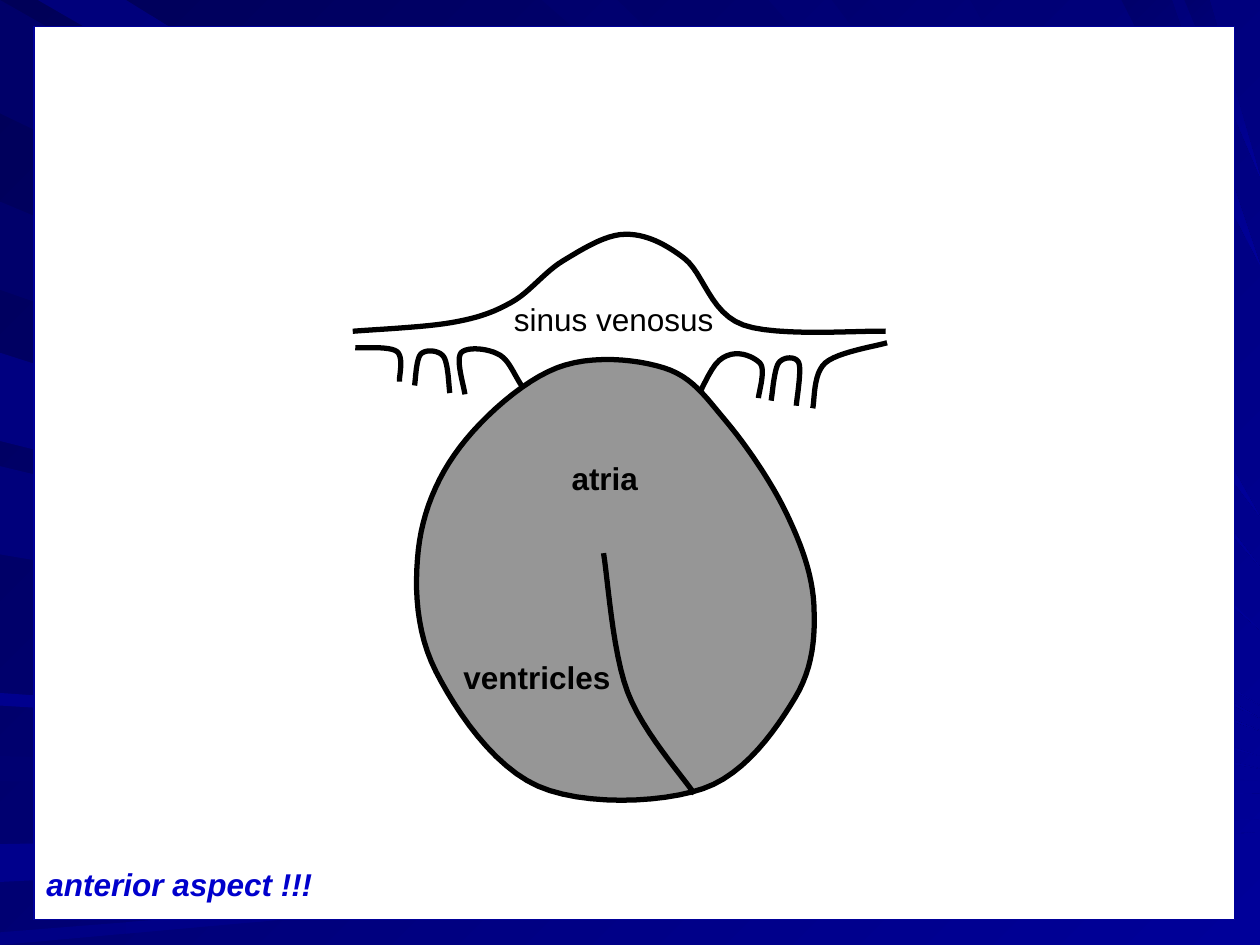
import pptx
import pptx.dml.color
import pptx.enum.shapes
import pptx.enum.text
import pptx.util
from pptx.util import Inches

LEFT_RAYS = [
    (0, 0.9, 5.7, "000069"), (1.6, 2.3, 5.8, "00006B"), (2.8, 3.5, 6, "000080"),
    (3.7, 4.4, 6.1, "00007B"), (5.5, 5.6, 6.2, "00008E"), (6, 6.2, 6.3, "000071"),
    (6.7, 7, 6.5, "00008C"), (7.4, 7.5, 6.6, "000085"),
]
TOP_RAYS = [
    (0.3, 1, 5.6, "00007B"), (4.3, 4.9, 5, "00006D"), (6.1, 6.6, 4.5, "000073"),
    (6.9, 7.7, 4.1, "000073"), (8.9, 9.3, 2.1, "00006B"), (9.4, 9.6, 1.4, "00006D"),
]
VESSELS = [
    [(2.8, 2.63), (3.59, 2.56), (4.06, 2.4), (4.47, 2.07), (4.96, 1.86), (5.43, 2.05),
     (5.9, 2.58), (7.03, 2.63)],
    [(2.82, 2.76), (3.15, 2.79), (3.17, 3.03)],
    [(3.29, 3.06), (3.34, 2.81), (3.52, 2.83), (3.57, 3.12)],
    [(3.69, 3.13), (3.66, 2.8), (3.97, 2.82), (4.19, 3.13), (4.57, 3.53), (5.29, 3.5),
     (5.71, 2.86), (6.03, 2.88), (6.02, 3.16)],
    [(6.12, 3.18), (6.18, 2.88), (6.34, 2.88), (6.32, 3.22)],
    [(6.45, 3.24), (6.55, 2.88), (7.04, 2.72)],
]
HEART = [
    (4.42, 2.92), (3.65, 3.55), (3.32, 4.37), (3.46, 5.33), (4.27, 6.24), (5.58, 6.26),
    (6.31, 5.54), (6.46, 4.8), (6.24, 4.07), (5.76, 3.34), (5.27, 2.92),
]
SEPTUM = [(5.51, 6.3), (4.98, 5.49), (4.79, 4.39)]
LABELS = [
    ("anterior aspect !!!", 0.27, 6.82, 2.99, "0000CC", True, True, "LEFT"),
    ("sinus venosus", 3.98, 2.33, 1.89, "000000", False, False, "LEFT"),
    ("ventricles", 3.58, 5.17, 1.42, "000000", True, False, "LEFT"),
    ("atria", 4.13, 3.59, 1.34, "000000", True, False, "CENTER"),
]


def color(value):
    """Return the colour for a hex string."""
    return pptx.dml.color.RGBColor.from_string(value)


def paint_gradient(fill, start, end, angle):
    """Fill with a gradient at a clockwise angle."""
    fill.gradient()
    fill.gradient_angle = (360 - angle) % 360
    for stop, value in zip(fill.gradient_stops, (start, end)):
        stop.color.rgb = color(value)


def style_shape(shape, fill, line, width):
    """Give a shape a plain fill and line and no shadow."""
    shape.shadow.inherit = False
    shape.line.color.rgb = color(line)
    shape.line.width = pptx.util.Pt(width)
    if fill:
        shape.fill.solid()
        shape.fill.fore_color.rgb = color(fill)
    else:
        shape.fill.background()


def add_outline(page, left, top, points, closed):
    """Build a freeform through points in inches from the box's corner."""
    places = [(left + Inches(x), top + Inches(y)) for x, y in points]
    builder = page.shapes.build_freeform(*places[0])
    builder.add_line_segments(places[1:], close=closed)
    return builder.convert_to_shape()


def trace_curve(knots, closed, steps=12):
    """Return points along a smooth curve through the knots."""
    if closed:
        chain = [knots[-1], *knots, *knots[:2]]
    else:
        chain = [knots[0], *knots, knots[-1]]
    points = [knots[0]]
    for before, start, end, after in zip(chain, chain[1:], chain[2:], chain[3:]):
        for step in range(1, steps + 1):
            t = step / steps
            points.append(tuple(
                a * (1 - t) ** 3
                + 3 * (a + (b - p) / 6) * t * (1 - t) ** 2
                + 3 * (b - (n - a) / 6) * t * t * (1 - t)
                + b * t ** 3
                for p, a, b, n in zip(before, start, end, after)
            ))
    return points


def add_curve(page, left, top, knots, fill=None):
    """Draw a thick black curve, closed and filled when a colour is given."""
    closed = fill is not None
    shape = add_outline(page, left, top, trace_curve(knots, closed), closed)
    style_shape(shape, fill, "000000", 3)


def add_backdrop(page, left, top, width):
    """Paint the blue background and the rays that meet its right edge."""
    paint_gradient(page.background.fill, "000058", "000099", 45)
    edge = width.inches
    rays = [([(0, a), (0, b), (edge, tip)], start, 0) for a, b, tip, start in LEFT_RAYS]
    rays += [([(a, 0), (b, 0), (edge, tip)], start, 45) for a, b, tip, start in TOP_RAYS]
    for points, start, angle in rays:
        ray = add_outline(page, left, top, points, True)
        ray.shadow.inherit = False
        paint_gradient(ray.fill, start, "000099", angle)
        ray.line.fill.background()


def add_panel(page, left, top, width, height):
    """Place the white panel behind the drawing."""
    panel = page.shapes.add_shape(pptx.enum.shapes.MSO_SHAPE.RECTANGLE, left, top, width, height)
    style_shape(panel, "FFFFFF", "000099", 0.75)


def add_heart(page, left, top):
    """Draw the vessels, the heart and its septum."""
    for vessel in VESSELS:
        add_curve(page, left, top, vessel)
    add_curve(page, left, top, HEART, "969696")
    add_curve(page, left, top, SEPTUM)


def add_labels(page, left, top):
    """Write the names of the parts and the aspect."""
    for text, x, y, width, value, bold, italic, align in LABELS:
        box = page.shapes.add_textbox(left + Inches(x), top + Inches(y), Inches(width), Inches(0.4))
        box.text_frame.word_wrap = True
        para = box.text_frame.paragraphs[0]
        para.text = text
        para.alignment = pptx.enum.text.PP_ALIGN[align]
        para.font.name = "Arial"
        para.font.size = pptx.util.Pt(18)
        para.font.bold = bold
        para.font.italic = italic
        para.font.color.rgb = color(value)


def main():
    """Build and save the deck."""
    deck = pptx.Presentation()
    deck.slide_width, deck.slide_height = Inches(10), Inches(7.5)
    page = deck.slides.add_slide(deck.slide_layouts[6])
    corner = (Inches(0), Inches(0))
    add_backdrop(page, *corner, Inches(10))
    add_panel(page, Inches(0.27), Inches(0.21), Inches(9.53), Inches(7.09))
    add_heart(page, *corner)
    add_labels(page, *corner)
    deck.save("out.pptx")


if __name__ == "__main__":
    main()
